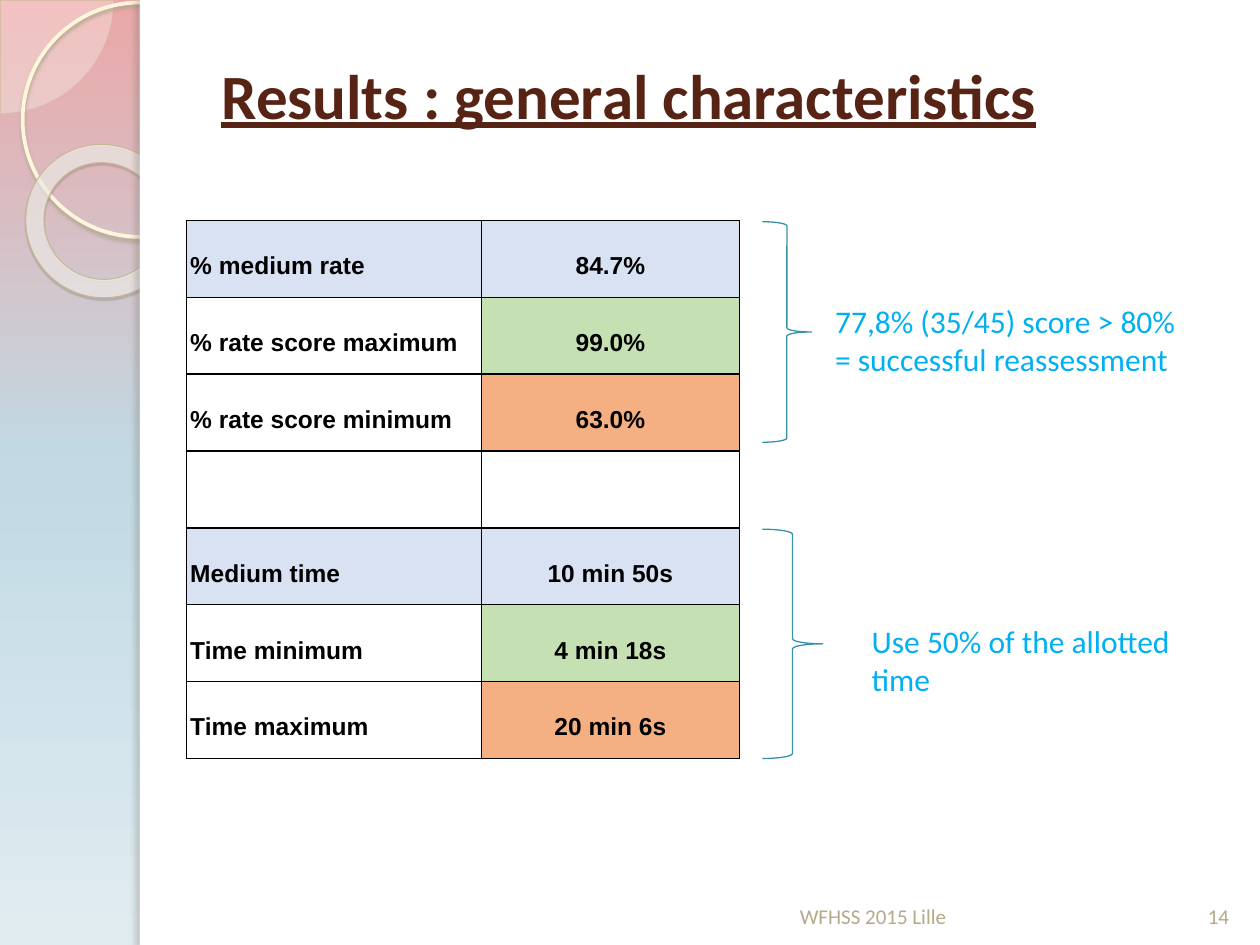
from lxml import etree
from pptx import Presentation
from pptx.dml.color import RGBColor
from pptx.enum.shapes import MSO_SHAPE
from pptx.enum.text import MSO_ANCHOR, PP_ALIGN
from pptx.oxml.ns import qn
from pptx.util import Inches, Pt

LEFT, CENTER, JUSTIFY = PP_ALIGN.LEFT, PP_ALIGN.CENTER, PP_ALIGN.JUSTIFY
TOP, MIDDLE, BOTTOM = MSO_ANCHOR.TOP, MSO_ANCHOR.MIDDLE, MSO_ANCHOR.BOTTOM
PIE, ELLIPSE, DONUT = MSO_SHAPE.CHORD, MSO_SHAPE.OVAL, MSO_SHAPE.DONUT
PIE = MSO_SHAPE.PIE
RECTANGLE, BRACE = MSO_SHAPE.RECTANGLE, MSO_SHAPE.RIGHT_BRACE

COLUMNS, ROWS = 100, 75
WHITE, BLACK, BROWN, SAND = "FFFFFF", "000000", "572314", "B6A98A"
SKY, TEAL = "00B0F0", "3891A7"
BLUE, GREEN, ORANGE = "D9E2F3", "C5E0B3", "F4B083"


def color(value):
    """Turn a hex string into a colour."""
    return RGBColor.from_string(value)


def add_node(parent, tag, **attributes):
    """Append a drawing element and return it."""
    values = {name: str(value) for name, value in attributes.items()}
    return etree.SubElement(parent, qn(tag), values)


def write(frame, text, size=18, font="Calibri", ink=BLACK, bold=False, underline=False,
          align=LEFT, anchor=TOP, spacing=None, after=None):
    """Put one formatted paragraph into a text frame."""
    frame.word_wrap = True
    frame.vertical_anchor = anchor
    para = frame.paragraphs[0]
    para.alignment = align
    para.line_spacing = spacing
    para.space_after = None if after is None else Pt(after)
    span = para.add_run()
    span.text = text
    span.font.name, span.font.size = font, Pt(size)
    span.font.bold, span.font.underline = bold, underline
    span.font.color.rgb = color(ink)


class Slide:
    """The current slide, measured in grid columns and rows."""

    def __init__(self, deck):
        """Add a blank page and work out the grid."""
        self.page = deck.slides.add_slide(deck.slide_layouts[6])
        self.column = deck.slide_width / COLUMNS
        self.row = deck.slide_height / ROWS

    def place(self, left, top, width, height):
        """Convert grid units to slide lengths."""
        return (round(left * self.column), round(top * self.row),
                round(width * self.column), round(height * self.row))

    def background(self, *stops):
        """Fill the page from top to bottom with (position, colour) stops."""
        self.page.background.fill.gradient()
        gradient = self.page.element.find(".//" + qn("a:gradFill"))
        for child in list(gradient):
            gradient.remove(child)
        stop_list = add_node(gradient, "a:gsLst")
        for position, value in stops:
            stop = add_node(stop_list, "a:gs", pos=position * 1000)
            add_node(stop, "a:srgbClr", val=value)
        add_node(gradient, "a:lin", ang=90 * 60000, scaled=0)

    def shape(self, kind, area, fill=None, opacity=100, line=None, weight=0.75,
              shadow=None, adjust=(), turn=0):
        """Add a preset shape; shadow is colour, opacity, blur, distance, angle."""
        shape = self.page.shapes.add_shape(kind, *self.place(*area))
        shape.rotation = turn
        for index, value in enumerate(adjust):
            shape.adjustments[index] = value
        if fill:
            shape.fill.solid()
            shape.fill.fore_color.rgb = color(fill)
            tint = shape.element.spPr.find(qn("a:solidFill"))[0]
            add_node(tint, "a:alpha", val=opacity * 1000)
        else:
            shape.fill.background()
        if line:
            shape.line.color.rgb = color(line)
            shape.line.width = Pt(weight)
        else:
            shape.line.fill.background()
        shape.shadow.inherit = False
        if shadow:
            value, strength, blur, distance, angle = shadow
            effects = shape.element.spPr.find(qn("a:effectLst"))
            outer = add_node(effects, "a:outerShdw", blurRad=Pt(blur), dist=Pt(distance),
                             dir=angle * 60000, algn="tl", rotWithShape=0)
            tint = add_node(outer, "a:srgbClr", val=value)
            add_node(tint, "a:alpha", val=strength * 1000)

    def text(self, text, area, **style):
        """Add a text box."""
        box = self.page.shapes.add_textbox(*self.place(*area))
        write(box.text_frame, text, **style)

    def border(self, cell):
        """Draw a black line on all sides of a cell."""
        properties = cell._tc.get_or_add_tcPr()
        for index, side in enumerate(("a:lnL", "a:lnR", "a:lnT", "a:lnB")):
            line = add_node(properties, side, w=Pt(1))
            add_node(add_node(line, "a:solidFill"), "a:srgbClr", val=BLACK)
            properties.insert(index, line)

    def table(self, records, left, top, widths, height):
        """Add a table of (label, value, label fill, value fill) records."""
        area = self.place(left, top, sum(widths), height * len(records))
        table = self.page.shapes.add_table(len(records), len(widths), *area).table
        table.first_row = table.horz_banding = False
        for column, width in zip(table.columns, widths):
            column.width = round(width * self.column)
        for row, (label, value, *fills) in enumerate(records):
            table.rows[row].height = round(height * self.row)
            for index, (text, fill, align) in enumerate(
                    zip((label, value), fills, (JUSTIFY, CENTER))):
                cell = table.cell(row, index)
                cell.margin_left = cell.margin_right = Inches(0.03)
                cell.margin_top, cell.margin_bottom = Inches(0.01), 0
                cell.vertical_anchor = MIDDLE
                if fill:
                    cell.fill.solid()
                    cell.fill.fore_color.rgb = color(fill)
                else:
                    cell.fill.background()
                self.border(cell)
                if text:
                    write(cell.text_frame, text, size=14, font="Arial", bold=True,
                          align=align, anchor=MIDDLE, spacing=1.5, after=10)


deck = Presentation()
deck.slide_width, deck.slide_height = Inches(10), Inches(7.5)
slide = Slide(deck)

slide.background((0, "EBA7A8"), (50, "C1DAE4"), (100, "E1ECF1"))
slide.shape(PIE, (-8.9, -8.9, 17.9, 17.9), fill="FEFAF4", opacity=33,
            line="D3C39F", weight=0.25, adjust=(0, 54))
slide.shape(ELLIPSE, (1.8, 0.2, 18.6, 18.6), line="FFF6DB", weight=2.15,
            shadow=("AFA58D", 85, 2, 2, 90))
slide.shape(DONUT, (2, 11.5, 12.3, 12.1), fill="FFFEFB", opacity=60, line="C7B893",
            weight=0.58, shadow=("5A5444", 35, 1, 1.2, 75), adjust=(0.12,), turn=38.6)
slide.shape(RECTANGLE, (11.1, 0, 88.9, 75), fill=WHITE)
slide.shape(RECTANGLE, (11.1, 0, 0.8, 75), fill=WHITE, shadow=("706B5F", 25, 3, 3, 180))

slide.text("Results : general characteristics", (16.6, 1.2, 82, 12.5), size=36,
           ink=BROWN, bold=True, underline=True, anchor=MIDDLE)
slide.text("WFHSS 2015 Lille", (62.5, 69, 31.7, 5.2), size=12, ink=SAND, anchor=BOTTOM)
slide.text("14", (94.2, 69, 5, 5.2), size=12, ink="B5A788", align=CENTER, anchor=BOTTOM)

slide.table([
    ("% medium rate", "84.7%", BLUE, BLUE),
    ("% rate score maximum", "99.0%", None, GREEN),
    ("% rate score minimum", "63.0%", None, ORANGE),
    ("", "", None, None),
    ("Medium time", "10 min 50s", BLUE, BLUE),
    ("Time minimum", "4 min 18s", None, GREEN),
    ("Time maximum", "20 min 6s", None, ORANGE),
], left=14.8, top=17.5, widths=(23.4, 20.5), height=6.1)

NOTES = [
    ("77,8% (35/45) score > 80% = successful reassessment",
     (65.3, 23.5, 29.3, 7.1), (60.5, 17.6, 3.9, 17.5)),
    ("Use 50% of the allotted time",
     (68.2, 48.9, 28.2, 7.1), (60.5, 42, 4.8, 18.2)),
]
for note, note_area, brace_area in NOTES:
    slide.text(note, note_area, ink=SKY)
    slide.shape(BRACE, brace_area, line=TEAL)

deck.save("out.pptx")
